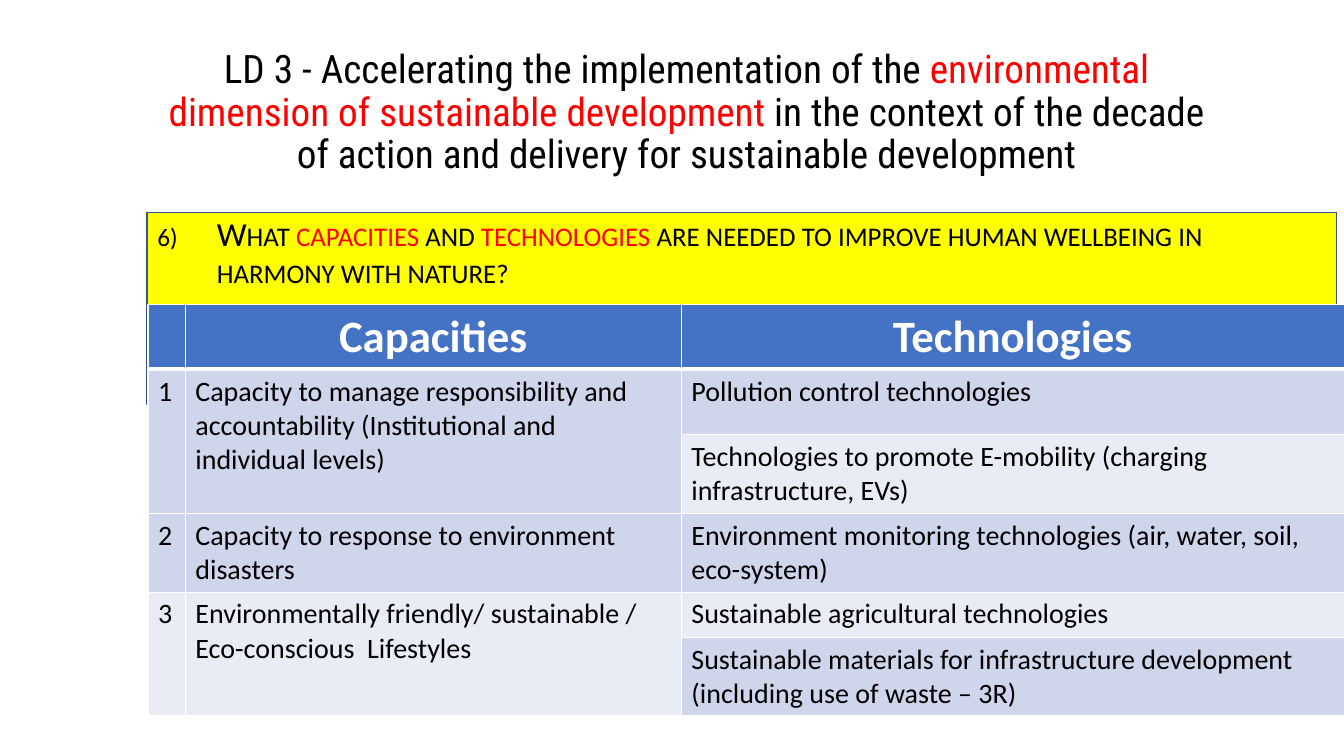
from dataclasses import dataclass

from lxml import etree
from pptx import Presentation
from pptx.dml.color import RGBColor
from pptx.enum.shapes import MSO_SHAPE
from pptx.enum.text import MSO_ANCHOR, MSO_AUTO_SIZE, PP_ALIGN
from pptx.oxml.ns import qn
from pptx.util import Cm, Pt

RECTANGLE = MSO_SHAPE.RECTANGLE
TOP, MIDDLE = MSO_ANCHOR.TOP, MSO_ANCHOR.MIDDLE
NO_AUTOFIT = MSO_AUTO_SIZE.NONE
LEFT, CENTER = PP_ALIGN.LEFT, PP_ALIGN.CENTER


@dataclass(frozen=True)
class Theme:
    title_font: str = "Roboto Condensed"
    body_font: str = "Calibri"
    title_size: int = 28
    question_size: int = 24
    header_size: int = 32
    cell_size: int = 20
    text: str = "000000"
    accent: str = "FF0000"
    white: str = "FFFFFF"
    banner: str = "FFFF00"
    banner_line: str = "325491"
    header: str = "4472C4"
    dark_band: str = "CFD5EA"
    light_band: str = "E9EBF5"


THEME = Theme()

TITLE = [
    ("LD 3 - Accelerating the implementation of the ", THEME.text),
    ("environmental dimension of sustainable development ", THEME.accent),
    ("in the context of the decade of action and delivery for sustainable development", THEME.text),
]
QUESTION_NUMBER = 6
QUESTION = [
    ("What ", THEME.text),
    ("capacities ", THEME.accent),
    ("and ", THEME.text),
    ("technologies", THEME.accent),
    (" are needed to improve human wellbeing in harmony with nature?", THEME.text),
]
HEADERS = ["", "Capacities", "Technologies"]
CAPACITIES = [
    ("Capacity to manage responsibility and accountability (Institutional and individual levels)",
     THEME.dark_band,
     [("Pollution control technologies", THEME.dark_band),
      ("Technologies to promote E-mobility (charging infrastructure, EVs)", THEME.light_band)]),
    ("Capacity to response to environment disasters",
     THEME.dark_band,
     [("Environment monitoring technologies (air, water, soil, eco-system)", THEME.dark_band)]),
    ("Environmentally friendly/ sustainable / Eco-conscious  Lifestyles",
     THEME.light_band,
     [("Sustainable agricultural technologies", THEME.light_band),
      ("Sustainable materials for infrastructure development (including use of waste – 3R)",
       THEME.dark_band)]),
]

SLIDE_SIZE = (33.87, 19.05)
TITLE_BOX = (3.71, 1.02, 27.18, 3.68)
BANNER_BOX = (3.71, 5.36, 29.97, 4.83)
QUESTION_BOX = (3.71, 5.36, 27.84, 13.54)
TABLE_CORNER = (3.73, 7.67)
COLUMN_WIDTHS = [0.94, 12.5, 16.71]
ROW_HEIGHTS = [1.04, 1.65, 1.65, 1.04, 1.14, 1.14]
QUESTION_INDENT = 1.5


def color(value):
    return RGBColor.from_string(value)


def format_run(run, font, size, run_color, bold=False):
    run.font.name = font
    run.font.size = Pt(size)
    run.font.color.rgb = color(run_color)
    run.font.bold = bold


def fill_placeholder(placeholder, box, parts, font, size, anchor, alignment):
    placeholder.left, placeholder.top, placeholder.width, placeholder.height = map(Cm, box)
    frame = placeholder.text_frame
    frame.auto_size = NO_AUTOFIT
    frame.word_wrap = True
    frame.vertical_anchor = anchor
    paragraph = frame.paragraphs[0]
    paragraph.alignment = alignment
    paragraph.line_spacing = 0.9
    for text, run_color in parts:
        run = paragraph.add_run()
        run.text = text
        format_run(run, font, size, run_color)
    return paragraph


def number_question(paragraph):
    paragraph.space_before = Pt(10)
    properties = paragraph._p.get_or_add_pPr()
    properties.set("marL", str(Cm(QUESTION_INDENT)))
    properties.set("indent", str(-Cm(QUESTION_INDENT)))
    etree.SubElement(properties, qn("a:buSzPct"), val="75000")
    etree.SubElement(properties, qn("a:buFont"), typeface="+mj-lt")
    etree.SubElement(properties, qn("a:buAutoNum"), type="arabicParenR", startAt=str(QUESTION_NUMBER))
    for run in paragraph.runs:
        run.font._element.set("cap", "small")


def add_banner(slide):
    banner = slide.shapes.add_shape(RECTANGLE, *map(Cm, BANNER_BOX))
    banner.shadow.inherit = False
    banner.fill.solid()
    banner.fill.fore_color.rgb = color(THEME.banner)
    banner.line.color.rgb = color(THEME.banner_line)
    banner.line.width = Pt(1)
    slide.shapes._spTree.insert(2, banner._element)


def set_borders(cell, bottom):
    properties = cell._tc.get_or_add_tcPr()
    widths = {"a:lnL": 1, "a:lnR": 1, "a:lnT": 1, "a:lnB": bottom}
    for position, (tag, width) in enumerate(widths.items()):
        line = etree.Element(qn(tag), w=str(Pt(width)))
        fill = etree.SubElement(line, qn("a:solidFill"))
        etree.SubElement(fill, qn("a:srgbClr"), val=THEME.white)
        properties.insert(position, line)


def fill_cell(cell, text, background, is_header=False):
    cell.fill.solid()
    cell.fill.fore_color.rgb = color(background)
    set_borders(cell, 3 if is_header else 1)
    cell.text_frame.text = text
    paragraph = cell.text_frame.paragraphs[0]
    paragraph.alignment = CENTER if is_header else LEFT
    size = THEME.header_size if is_header else THEME.cell_size
    text_color = THEME.white if is_header else THEME.text
    for run in paragraph.runs:
        format_run(run, THEME.body_font, size, text_color, is_header)


def add_capacity_table(slide):
    size = (sum(COLUMN_WIDTHS), sum(ROW_HEIGHTS))
    table = slide.shapes.add_table(
        len(ROW_HEIGHTS), len(COLUMN_WIDTHS), *map(Cm, TABLE_CORNER + size)).table
    for column, width in zip(table.columns, COLUMN_WIDTHS):
        column.width = Cm(width)
    for row, height in zip(table.rows, ROW_HEIGHTS):
        row.height = Cm(height)
    for column, header in enumerate(HEADERS):
        fill_cell(table.cell(0, column), header, THEME.header, True)
    first = 1
    for number, (capacity, band, technologies) in enumerate(CAPACITIES, 1):
        last = first + len(technologies) - 1
        for row, (technology, technology_band) in enumerate(technologies, first):
            fill_cell(table.cell(row, 0), str(number) if row == first else "", band)
            fill_cell(table.cell(row, 1), capacity if row == first else "", band)
            fill_cell(table.cell(row, 2), technology, technology_band)
        if last > first:
            for column in (0, 1):
                table.cell(first, column).merge(table.cell(last, column))
        first = last + 1


def main():
    presentation = Presentation()
    presentation.slide_width, presentation.slide_height = map(Cm, SLIDE_SIZE)
    slide = presentation.slides.add_slide(presentation.slide_layouts[1])
    add_banner(slide)
    fill_placeholder(slide.shapes.title, TITLE_BOX, TITLE,
                     THEME.title_font, THEME.title_size, MIDDLE, CENTER)
    question = fill_placeholder(slide.placeholders[1], QUESTION_BOX, QUESTION,
                                THEME.body_font, THEME.question_size, TOP, LEFT)
    number_question(question)
    add_capacity_table(slide)
    presentation.save("out.pptx")


if __name__ == "__main__":
    main()
